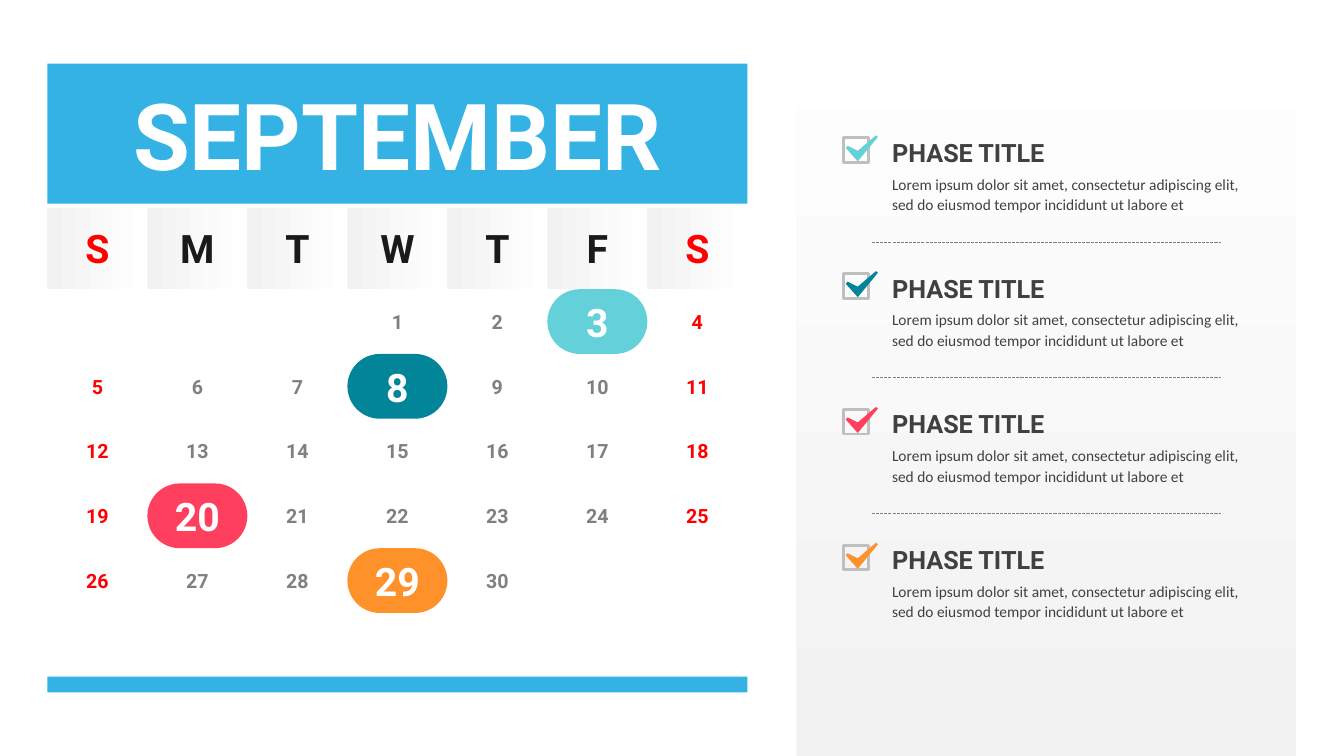
from lxml import etree
from pptx import Presentation
from pptx import util as u
from pptx.dml import color
from pptx.enum import dml, shapes, text
from pptx.oxml import ns

Pt = u.Pt
RGB = color.RGBColor

BLUE = RGB(0x34, 0xB2, 0xE4)
AQUA = RGB(0x64, 0xD0, 0xDA)
TEAL = RGB(0x02, 0x85, 0x99)
ROSE = RGB(0xFF, 0x3F, 0x5E)
AMBER = RGB(0xFE, 0x91, 0x2A)
RED = RGB(0xFF, 0x00, 0x00)
WHITE = RGB(0xFF, 0xFF, 0xFF)
PALE = RGB(0xF2, 0xF2, 0xF2)
SILVER = RGB(0xBF, 0xBF, 0xBF)
GRAY = RGB(0x80, 0x80, 0x80)
DARK = RGB(0x40, 0x40, 0x40)
BLACK = RGB(0x1A, 0x1A, 0x1A)

RECT = shapes.MSO_SHAPE.RECTANGLE
PILL = shapes.MSO_SHAPE.ROUNDED_RECTANGLE

LEFT, COL, ROW = 33.9, 71.42, 46.25
WIDE = 7 * COL
HEAD, DAYS = 148.3, 206.6
FIRST, LAST, SHIFT = 1, 30, 2
MARKS = {3: AQUA, 8: TEAL, 20: ROSE, 29: AMBER}

STEP = 97
TITLE = "PHASE TITLE"
BODY = ("Lorem ipsum dolor sit amet, consectetur adipiscing elit, "
        "sed do eiusmod tempor incididunt ut labore et")
TICK = [(23.1, 0.9), (24.5, 2.1), (10.1, 19.5), (1.5, 9.9), (2.9, 8.4), (10.1, 12)]


def add_run(para, words, size, tint, font="Roboto", bold=True):
    run = para.add_run()
    run.text = words
    run.font.name = font
    run.font.size = Pt(size)
    run.font.bold = bold
    run.font.color.rgb = tint


def trim(frame):
    frame.margin_left = frame.margin_right = 0
    frame.margin_top = frame.margin_bottom = 0
    frame.word_wrap = True


def add_label(shape, words, size, tint):
    frame = shape.text_frame
    trim(frame)
    frame.vertical_anchor = text.MSO_ANCHOR.MIDDLE
    para = frame.paragraphs[0]
    para.alignment = text.PP_ALIGN.CENTER
    add_run(para, words, size, tint)


def add_block(tree, kind, box, fill=None):
    shape = tree.add_shape(kind, *map(Pt, box))
    shape.shadow.inherit = False
    shape.line.fill.background()
    if fill is None:
        shape.fill.background()
    else:
        shape.fill.solid()
        shape.fill.fore_color.rgb = fill
    return shape


def add_fade(tree, box, angle):
    shape = add_block(tree, RECT, box)
    shape.fill.gradient()
    shape.fill.gradient_angle = angle
    for stop, tint in zip(shape.fill.gradient_stops, (PALE, WHITE)):
        stop.color.rgb = tint
    return shape


def add_day(tree, day):
    row, col = divmod(day + SHIFT, 7)
    box = (LEFT + col * COL, DAYS + row * ROW, COL, ROW)
    if day in MARKS:
        cell = add_block(tree, PILL, box, MARKS[day])
        cell.adjustments[0] = 0.5
        add_label(cell, str(day), 28, WHITE)
    else:
        cell = tree.add_textbox(*map(Pt, box))
        add_label(cell, str(day), 14, RED if col in (0, 6) else GRAY)


def add_month(slide):
    tree = slide.shapes.add_group_shape().shapes
    for col, name in enumerate("SMTWTFS"):
        cell = add_fade(tree, (LEFT + col * COL, HEAD, COL, 57.8), 0)
        add_label(cell, name, 28, RED if col in (0, 6) else BLACK)
    top = add_block(tree, RECT, (LEFT, 45.4, WIDE, 100.1), BLUE)
    add_label(top, "SEPTEMBER", 66, WHITE)
    for day in range(FIRST, LAST + 1):
        add_day(tree, day)
    add_block(tree, RECT, (LEFT, 483.3, WIDE, 11.3), BLUE)


def add_check(slide, x, y, tint):
    tree = slide.shapes.add_group_shape().shapes
    box = add_block(tree, RECT, (x, y + 2.6, 17.6, 17.6))
    box.line.color.rgb = SILVER
    box.line.width = Pt(2)
    dots = [(Pt(x + dx), Pt(y + dy)) for dx, dy in TICK]
    pen = tree.build_freeform(*dots[0])
    pen.add_line_segments(dots[1:])
    tick = pen.convert_to_shape()
    tick.shadow.inherit = False
    tick.line.fill.background()
    tick.fill.solid()
    tick.fill.fore_color.rgb = tint


def add_phase(slide, y, tint):
    add_check(slide, 602.6, y, tint)
    frame = slide.shapes.add_textbox(Pt(637.2), Pt(y), Pt(255), Pt(57.6)).text_frame
    trim(frame)
    frame.auto_size = text.MSO_AUTO_SIZE.SHAPE_TO_FIT_TEXT
    head, body = frame.paragraphs[0], frame.add_paragraph()
    for para in (head, body):
        para.line_spacing = 1.1
        para.space_before = Pt(4)
    add_run(head, TITLE, 18, DARK)
    add_run(body, BODY, 11, DARK, "Calibri", False)


def add_rule(slide, y):
    rule = slide.shapes.add_connector(
        shapes.MSO_CONNECTOR.STRAIGHT, Pt(622.8), Pt(y), Pt(872), Pt(y))
    rule.line.color.rgb = GRAY
    rule.line.width = Pt(0.75)
    rule.line.dash_style = dml.MSO_LINE.SQUARE_DOT
    etree.SubElement(rule._element.spPr, ns.qn("a:effectLst"))


def main():
    deck = Presentation()
    deck.slide_width, deck.slide_height = Pt(960), Pt(540)
    slide = deck.slides.add_slide(deck.slide_layouts[6])
    add_month(slide)
    add_fade(slide.shapes, (568.8, 0, 357.2, 540), 90)
    for i, tint in enumerate(MARKS.values()):
        add_phase(slide, 95.8 + i * STEP, tint)
    for i in range(len(MARKS) - 1):
        add_rule(slide, 172.9 + i * STEP)
    deck.save("out.pptx")


if __name__ == "__main__":
    main()
